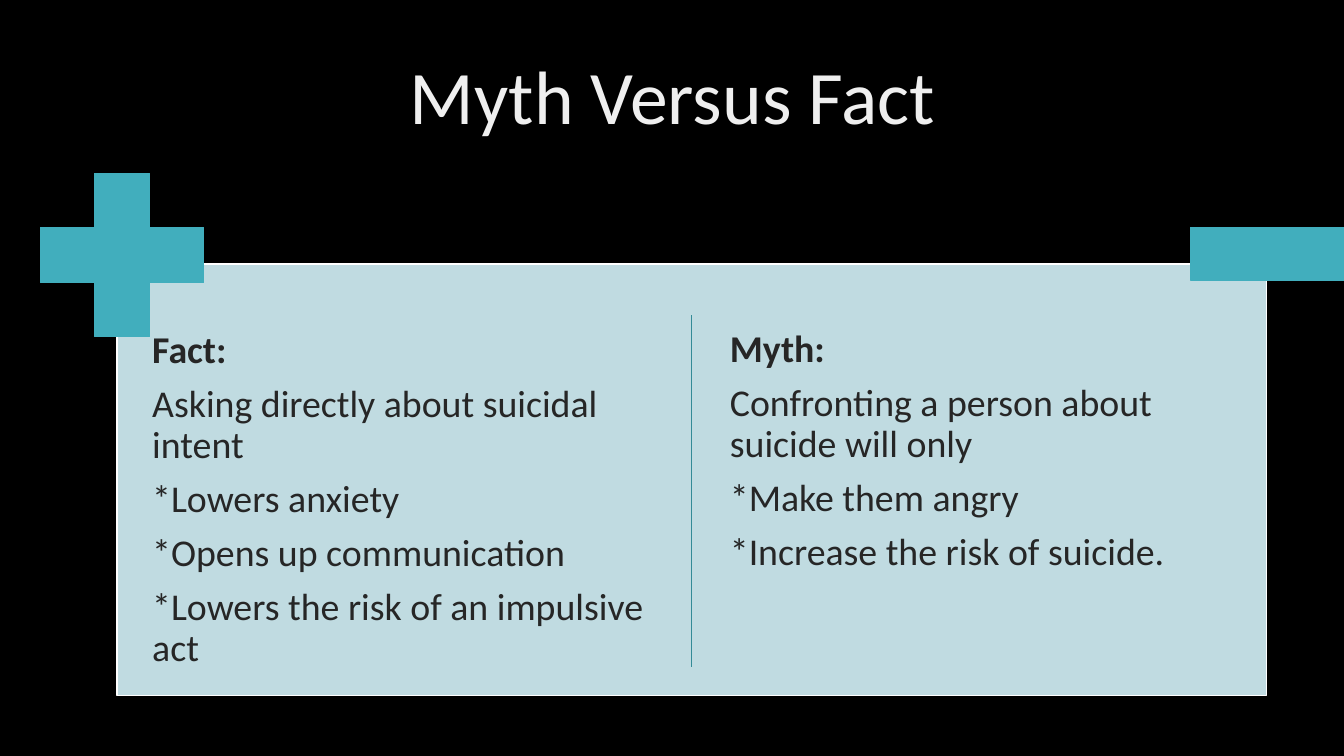
"""Build the Myth Versus Fact comparison slide."""
from dataclasses import dataclass

from lxml import etree
from pptx import Presentation
from pptx.dml.color import RGBColor
from pptx.enum import shapes, text
from pptx.oxml.ns import qn
from pptx.util import Inches, Pt

TITLE = "Myth Versus Fact"
COLUMNS = [
    ((1.45, 3.22, 5.39, 3.66), "Fact:", [
        "Asking directly about suicidal intent",
        "*Lowers anxiety",
        "*Opens up communication",
        "*Lowers the risk of an impulsive act",
    ]),
    ((7.18, 3.21, 5.23, 3.66), "Myth:", [
        "Confronting a person about suicide will only",
        "*Make them angry",
        "*Increase the risk of suicide.",
    ]),
]
TITLE_BOX = (0.92, 0.27, 11.5, 1.45)
PANEL = (1.16, 2.62, 11.4, 4.28)
PLUS = (0.4, 1.72, 1.62, 1.62)
MINUS = (11.81, 2.26, 1.52, 0.52)
DIVIDER = (6.86, 3.13, 6.86, 6.62)


@dataclass(frozen=True)
class Theme:
    font: str = "Calibri"
    title_size: float = 54
    body_size: float = 27
    gap: float = 9.4
    back: str = "000000"
    title: str = "EFEFEF"
    body: str = "262626"
    panel: str = "C0DBE1"
    edge: str = "FFFFFF"
    accent: str = "41AEBD"
    divider: str = "348B97"


THEME = Theme()


def inches(values):
    return [Inches(v) for v in values]


def rgb(value):
    return RGBColor.from_string(value)


def write(p, words, *, size, color, bold=False, align=text.PP_ALIGN.LEFT, after=0):
    p.alignment, p.line_spacing = align, 0.9
    p.space_before, p.space_after = Pt(0), Pt(after)
    r = p.add_run()
    r.text = words
    r.font.name, r.font.size, r.font.bold = THEME.font, Pt(size), bold
    r.font.color.rgb = rgb(color)


def add_block(slide, kind, box, fill, line):
    sp = slide.shapes.add_shape(kind, *inches(box))
    sp.shadow.inherit = False
    sp.fill.solid()
    sp.fill.fore_color.rgb = rgb(fill)
    sp.line.color.rgb = rgb(line)
    sp.line.width = Pt(1)
    return sp


def add_title(slide):
    sp = slide.shapes.title
    sp.left, sp.top, sp.width, sp.height = inches(TITLE_BOX)
    tf = sp.text_frame
    tf.auto_size = text.MSO_AUTO_SIZE.NONE
    tf.vertical_anchor = text.MSO_ANCHOR.MIDDLE
    write(tf.paragraphs[0], TITLE, size=THEME.title_size, color=THEME.title,
          align=text.PP_ALIGN.CENTER)


def add_column(slide, box, heading, lines):
    tf = slide.shapes.add_textbox(*inches(box)).text_frame
    tf.word_wrap = True
    tf.margin_left = tf.margin_right = tf.margin_top = tf.margin_bottom = Inches(0.06)
    for i, words in enumerate([heading, *lines]):
        p = tf.add_paragraph() if i else tf.paragraphs[0]
        write(p, words, size=THEME.body_size, color=THEME.body, bold=i == 0,
              after=THEME.gap)


def add_divider(slide):
    line = slide.shapes.add_connector(shapes.MSO_CONNECTOR.STRAIGHT, *inches(DIVIDER))
    line.line.color.rgb = rgb(THEME.divider)
    line.line.width = Pt(1)
    etree.SubElement(line._element.spPr, qn("a:effectLst"))


def main():
    prs = Presentation()
    prs.slide_width, prs.slide_height = inches((13.33, 7.5))
    slide = prs.slides.add_slide(prs.slide_layouts[5])
    slide.background.fill.solid()
    slide.background.fill.fore_color.rgb = rgb(THEME.back)
    add_title(slide)
    kind = shapes.MSO_SHAPE
    add_block(slide, kind.RECTANGLE, PANEL, THEME.panel, THEME.edge)
    for column in COLUMNS:
        add_column(slide, *column)
    plus = add_block(slide, kind.CROSS, PLUS, THEME.accent, THEME.accent)
    plus.adjustments[0] = 0.33
    add_block(slide, kind.RECTANGLE, MINUS, THEME.accent, THEME.accent)
    add_divider(slide)
    prs.save("out.pptx")


if __name__ == "__main__":
    main()
